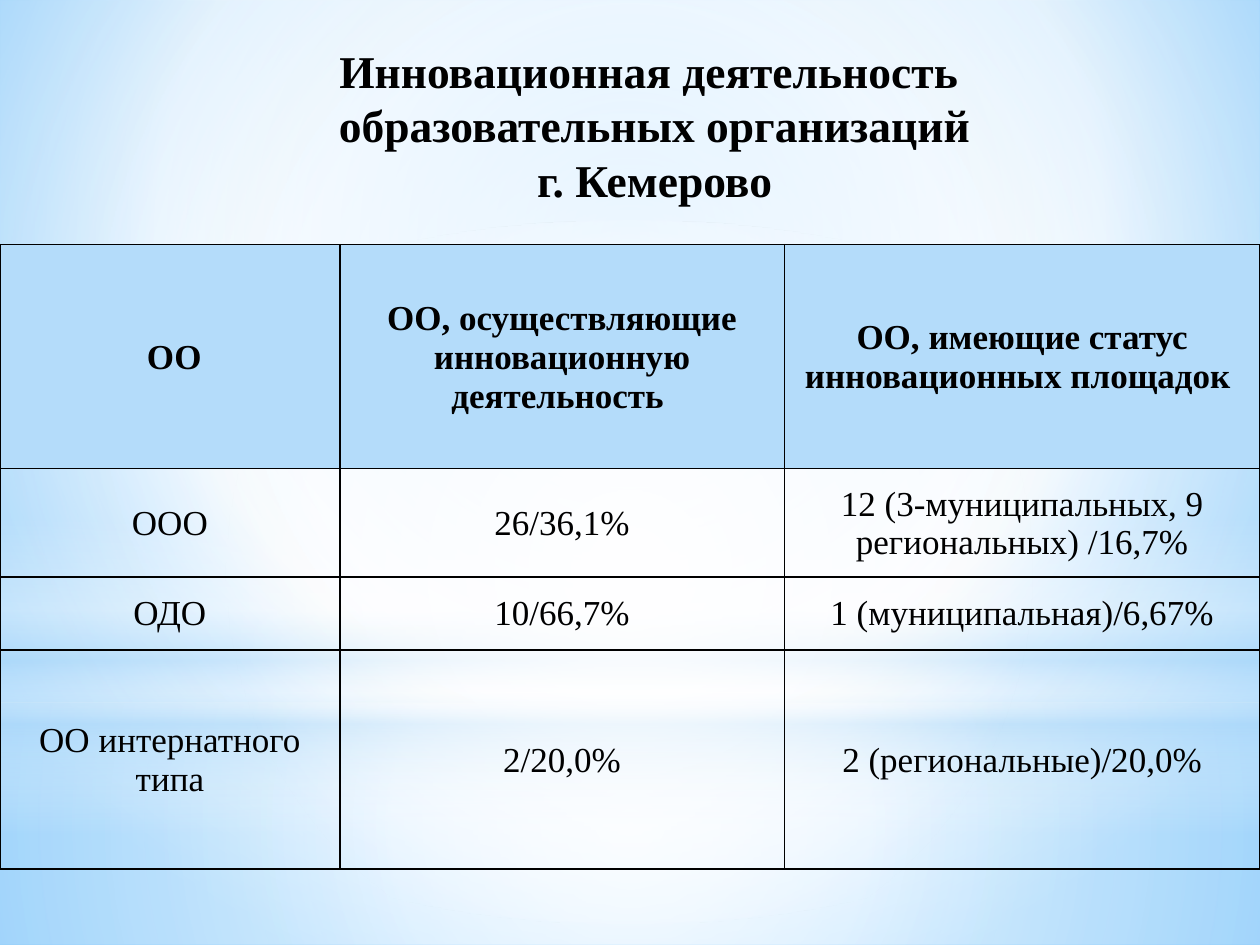
from dataclasses import dataclass
from lxml.etree import SubElement
from pptx import Presentation
from pptx.dml.color import RGBColor
from pptx.enum.shapes import MSO_SHAPE
from pptx.enum.text import MSO_ANCHOR, MSO_AUTO_SIZE, PP_ALIGN
from pptx.oxml.ns import qn
from pptx.util import Cm, Pt

HUES = {
    "ink": "000000",
    "white": "FFFFFF",
    "pale": "B4DCFA",
    "sky": "9ED5FF",
    "deep": "5BB9FF",
}
FONT = "Times New Roman"
WIDE, HIGH = 25.4, 19.05


@dataclass(frozen=True)
class Stop:
    place: int
    hue: str
    alpha: int = 100


@dataclass(frozen=True)
class Glow:
    kind: MSO_SHAPE
    top: float
    height: float
    stops: tuple[Stop, ...]
    focus: tuple[int, ...] | None = (50, 50, 50, 50)


SKY = (Stop(0, "sky"), Stop(60, "white"), Stop(100, "deep"))
GLOWS = (
    Glow(MSO_SHAPE.RECTANGLE, 14.17, 4.88,
         (Stop(0, "white", 91), Stop(37, "white", 76), Stop(100, "pale", 79))),
    Glow(MSO_SHAPE.RECTANGLE, 0, 14.17,
         (Stop(0, "white", 89), Stop(48, "white", 62), Stop(100, "pale", 79))),
    Glow(MSO_SHAPE.RECTANGLE, 10.46, 6.35,
         (Stop(0, "white", 0), Stop(29, "white", 30), Stop(45, "pale", 40),
          Stop(55, "white", 26), Stop(65, "pale", 60), Stop(100, "white", 0)),
         None),
    Glow(MSO_SHAPE.OVAL, 4.44, 14.17,
         (Stop(0, "white"), Stop(56, "white", 0))),
)
TITLE = (
    "Инновационная деятельность ",
    "образовательных организаций",
    "г. Кемерово",
)
COLS = (6.85, 8.96, 9.59)
ROWS = (4.52, 2.18, 1.47, 4.42)
CELLS = (
    (" ОО", "ОО, осуществляющие инновационную деятельность ",
     "ОО, имеющие статус инновационных площадок "),
    ("ООО", "26/36,1%", "12 (3-муниципальных, 9 региональных) /16,7%"),
    ("ОДО", "10/66,7%", "1 (муниципальная)/6,67%"),
    ("ОО интернатного типа", "2/20,0%", "2 (региональные)/20,0%"),
)


def blend(owner, fill, stops: tuple[Stop, ...], focus: tuple[int, ...] | None) -> None:
    fill.gradient()
    grad = owner.element.find(".//" + qn("a:gradFill"))
    grad.clear()
    grad.set("rotWithShape", "1")
    items = SubElement(grad, qn("a:gsLst"))
    for stop in stops:
        item = SubElement(items, qn("a:gs"), pos=str(stop.place * 1000))
        hue = SubElement(item, qn("a:srgbClr"), val=HUES[stop.hue])
        if stop.alpha < 100:
            SubElement(hue, qn("a:alpha"), val=str(stop.alpha * 1000))
    if focus is None:
        SubElement(grad, qn("a:lin"), ang="5400000", scaled="0")
        return
    ring = SubElement(grad, qn("a:path"), path="circle")
    sides = {side: str(part * 1000) for side, part in zip("ltrb", focus)}
    SubElement(ring, qn("a:fillToRect"), **sides)


def draw_glow(slide, glow: Glow) -> None:
    shape = slide.shapes.add_shape(glow.kind, 0, Cm(glow.top), Cm(WIDE), Cm(glow.height))
    shape.shadow.inherit = False
    shape.line.fill.background()
    blend(shape, shape.fill, glow.stops, glow.focus)


def add_text(par, text: str, size: int, bold: bool) -> None:
    par.alignment = PP_ALIGN.CENTER
    run = par.add_run()
    run.text = text
    font = run.font
    font.name, font.size, font.bold = FONT, Pt(size), bold
    font.color.rgb = RGBColor.from_string(HUES["ink"])


def draw_title(slide) -> None:
    box = slide.shapes.add_textbox(Cm(2.9), Cm(0.74), Cm(20.6), Cm(3.58))
    frame = box.text_frame
    frame.word_wrap = True
    frame.auto_size = MSO_AUTO_SIZE.SHAPE_TO_FIT_TEXT
    for num, line in enumerate(TITLE):
        par = frame.add_paragraph() if num else frame.paragraphs[0]
        add_text(par, line, 26, True)


def frame_cell(cell) -> None:
    props = cell._tc.get_or_add_tcPr()
    for num, side in enumerate(("lnL", "lnR", "lnT", "lnB")):
        line = SubElement(props, qn("a:" + side), w=str(Pt(1)))
        fill = SubElement(line, qn("a:solidFill"))
        SubElement(fill, qn("a:srgbClr"), val=HUES["ink"])
        props.insert(num, line)


def fill_cell(cell, text: str, head: bool) -> None:
    cell.vertical_anchor = MSO_ANCHOR.MIDDLE
    cell.margin_left = cell.margin_right = cell.margin_top = Cm(0.03)
    cell.margin_bottom = 0
    if head:
        cell.fill.solid()
        cell.fill.fore_color.rgb = RGBColor.from_string(HUES["pale"])
    else:
        cell.fill.background()
    frame_cell(cell)
    add_text(cell.text_frame.paragraphs[0], text, 20, head)


def draw_table(slide) -> None:
    table = slide.shapes.add_table(
        len(ROWS), len(COLS), 0, Cm(4.93), Cm(sum(COLS)), Cm(sum(ROWS))).table
    table.first_row = table.horz_banding = False
    for col, width in zip(table.columns, COLS):
        col.width = Cm(width)
    for num, (row, height) in enumerate(zip(table.rows, ROWS)):
        row.height = Cm(height)
        for cell, text in zip(row.cells, CELLS[num]):
            fill_cell(cell, text, num == 0)


def main() -> None:
    deck = Presentation()
    deck.slide_width, deck.slide_height = Cm(WIDE), Cm(HIGH)
    slide = deck.slides.add_slide(deck.slide_layouts[6])
    blend(slide, slide.background.fill, SKY, (20, 10, 20, 60))
    for glow in GLOWS:
        draw_glow(slide, glow)
    draw_title(slide)
    draw_table(slide)
    deck.save("out.pptx")


if __name__ == "__main__":
    main()
